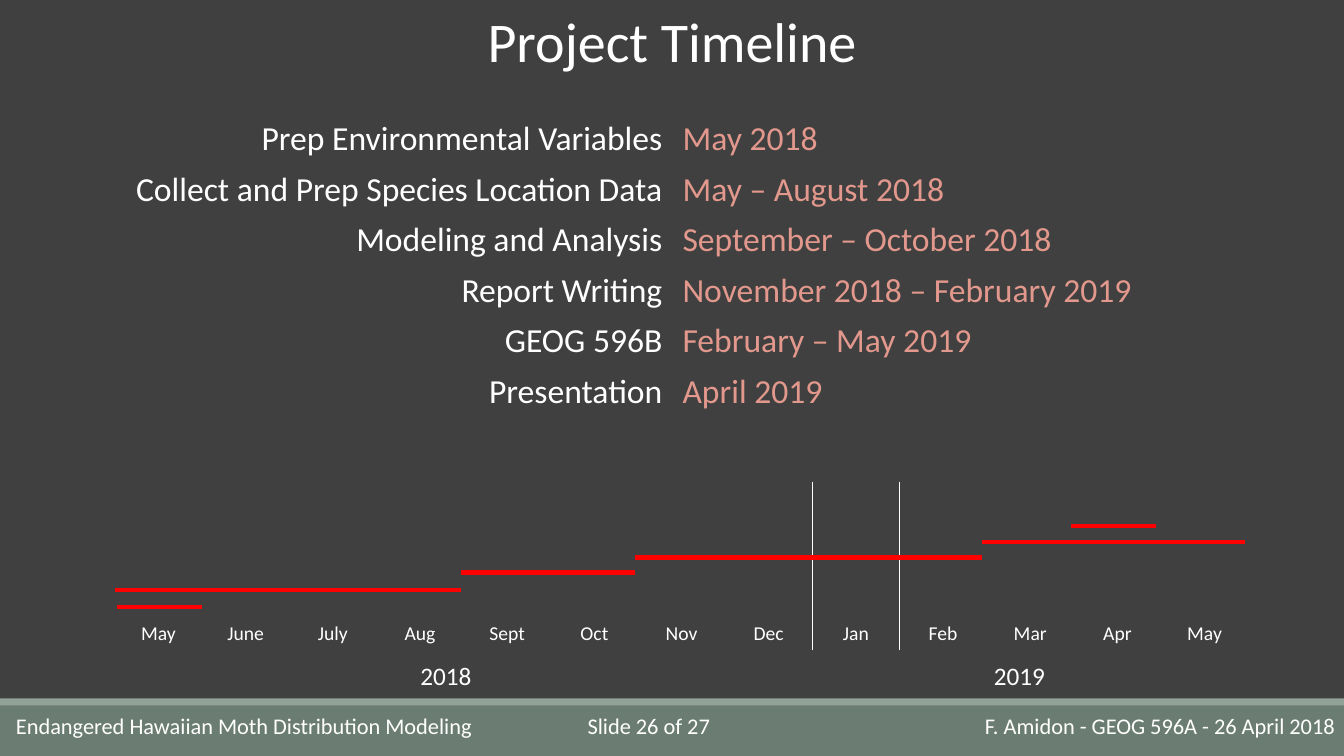
import pptx
import pptx.util
import pptx.dml.color
import pptx.enum.shapes
import pptx.enum.text
import pptx.oxml
import pptx.oxml.ns

Inches = pptx.util.Inches
Pt = pptx.util.Pt
RGBColor = pptx.dml.color.RGBColor
Align = pptx.enum.text.PP_ALIGN
Anchor = pptx.enum.text.MSO_ANCHOR

CHARCOAL = RGBColor(0x40, 0x40, 0x40)
WHITE = RGBColor(0xFF, 0xFF, 0xFF)
SALMON = RGBColor(0xE2, 0x98, 0x8C)
RED = RGBColor(0xFF, 0x00, 0x00)
MOSS = RGBColor(0x6B, 0x7D, 0x72)
SAGE = RGBColor(0x93, 0xA2, 0x99)
PLAIN_TABLE = "{2D5ABB26-0587-4C30-8999-92F81FD0307C}"

BANDS = [(7, 0.5, MOSS), (6.93, 0.07, SAGE)]
LABELS = [
    ("Project Timeline", (0, 0.02, 13.33, 0.77), 40, Align.CENTER, True),
    ("Endangered Hawaiian Moth Distribution Modeling", (0.06, 7.02, 5.58, 0.37), 16, Align.LEFT, True),
    ("F. Amidon - GEOG 596A - 26 April 2018", (7.37, 7.02, 5.97, 0.37), 16, Align.RIGHT, True),
    ("Slide 26 of 27", (5.57, 7.02, 1.73, 0.37), 16, Align.CENTER, True),
    ("2018", (4.07, 6.5, 0.71, 0.4), 18, Align.LEFT, False),
    ("2019", (9.76, 6.5, 0.71, 0.4), 18, Align.LEFT, False),
]
TASKS = [
    ("Prep Environmental Variables", "May 2018"),
    ("Collect and Prep Species Location Data", "May – August 2018"),
    ("Modeling and Analysis", "September – October 2018"),
    ("Report Writing", "November 2018 – February 2019"),
    ("GEOG 596B", "February – May 2019"),
    ("Presentation", "April 2019"),
]
MONTHS = ["May", "June", "July", "Aug", "Sept", "Oct", "Nov", "Dec", "Jan", "Feb", "Mar", "Apr", "May"]
CALENDAR_ROWS = 7
FIRST_RULED_ROW = 2
YEAR_START = MONTHS.index("Jan")
TASK_BARS = [
    (1.16, 2, 6.02),
    (1.14, 4.57, 5.85),
    (4.57, 6.3, 5.68),
    (6.3, 9.74, 5.53),
    (9.74, 12.35, 5.38),
    (10.62, 11.47, 5.22),
]


def assign(target, values):
    for name, value in values.items():
        setattr(target, name, value)


class SlideBuilder:
    def __init__(self, page, font):
        self.page = page
        self.font = font

    def background(self, colour):
        fill = self.page.background.fill
        fill.solid()
        fill.fore_color.rgb = colour

    def add_text(self, frame, text, size, colour, alignment):
        para = frame.paragraphs[0]
        para.alignment = alignment
        span = para.add_run()
        span.text = text
        assign(span.font, {"name": self.font, "size": Pt(size)})
        span.font.color.rgb = colour

    def band(self, top, height, colour):
        shape = self.page.shapes.add_shape(
            pptx.enum.shapes.MSO_SHAPE.RECTANGLE,
            Inches(0), Inches(top), Inches(13.33), Inches(height))
        shape.shadow.inherit = False
        shape.fill.solid()
        shape.fill.fore_color.rgb = colour
        shape.line.fill.background()

    def label(self, text, place, size, alignment, wrap):
        box = self.page.shapes.add_textbox(*map(Inches, place))
        assign(box.text_frame, {
            "word_wrap": wrap,
            "auto_size": pptx.enum.text.MSO_AUTO_SIZE.SHAPE_TO_FIT_TEXT,
        })
        self.add_text(box.text_frame, text, size, WHITE, alignment)

    def table(self, rows, columns, place):
        frame = self.page.shapes.add_table(rows, columns, *map(Inches, place))
        table = frame.table
        assign(table, {"first_row": False, "horz_banding": False})
        table._tbl.tblPr.find(pptx.oxml.ns.qn("a:tableStyleId")).text = PLAIN_TABLE
        for cell in table.iter_cells():
            cell.fill.background()
        return table

    def border(self, cell, side):
        line = pptx.oxml.parse_xml(
            f'<a:{side} {pptx.oxml.ns.nsdecls("a")} w="{Pt(1)}"><a:solidFill>'
            f'<a:srgbClr val="{WHITE}"/></a:solidFill></a:{side}>')
        cell._tc.get_or_add_tcPr().insert(0, line)

    def bar(self, start, end, height):
        line = self.page.shapes.add_connector(
            pptx.enum.shapes.MSO_CONNECTOR.STRAIGHT,
            Inches(start), Inches(height), Inches(end), Inches(height))
        line.line.color.rgb = RED
        line.line.width = Pt(3)
        line._element.spPr.append(pptx.oxml.parse_xml(
            f'<a:effectLst {pptx.oxml.ns.nsdecls("a")}/>'))

    def task_table(self):
        table = self.table(len(TASKS), 2, (1.16, 1.13, 11.02, 3))
        styles = [(WHITE, Align.RIGHT), (SALMON, Align.LEFT)]
        for row, task in enumerate(TASKS):
            for column, (text, (colour, alignment)) in enumerate(zip(task, styles)):
                cell = table.cell(row, column)
                cell.vertical_anchor = Anchor.MIDDLE
                self.add_text(cell.text_frame, text, 24, colour, alignment)

    def calendar(self):
        table = self.table(CALENDAR_ROWS, len(MONTHS), (1.14, 4.12, 11.24, 2.33))
        for cell in table.iter_cells():
            assign(cell, {"margin_top": 0, "margin_bottom": 0})
        for column, month in enumerate(MONTHS):
            cell = table.cell(CALENDAR_ROWS - 1, column)
            cell.margin_top = Inches(0.05)
            self.add_text(cell.text_frame, month, 14, WHITE, Align.CENTER)
        for row in range(FIRST_RULED_ROW, CALENDAR_ROWS):
            self.border(table.cell(row, YEAR_START - 1), "lnR")
            self.border(table.cell(row, YEAR_START), "lnL")


def main():
    deck = pptx.Presentation()
    assign(deck, {"slide_width": Inches(13.33), "slide_height": Inches(7.5)})
    builder = SlideBuilder(deck.slides.add_slide(deck.slide_layouts[6]), "Calibri")
    builder.background(CHARCOAL)
    for band in BANDS:
        builder.band(*band)
    for label in LABELS:
        builder.label(*label)
    builder.task_table()
    builder.calendar()
    for bar in TASK_BARS:
        builder.bar(*bar)
    deck.save("out.pptx")


if __name__ == "__main__":
    main()
